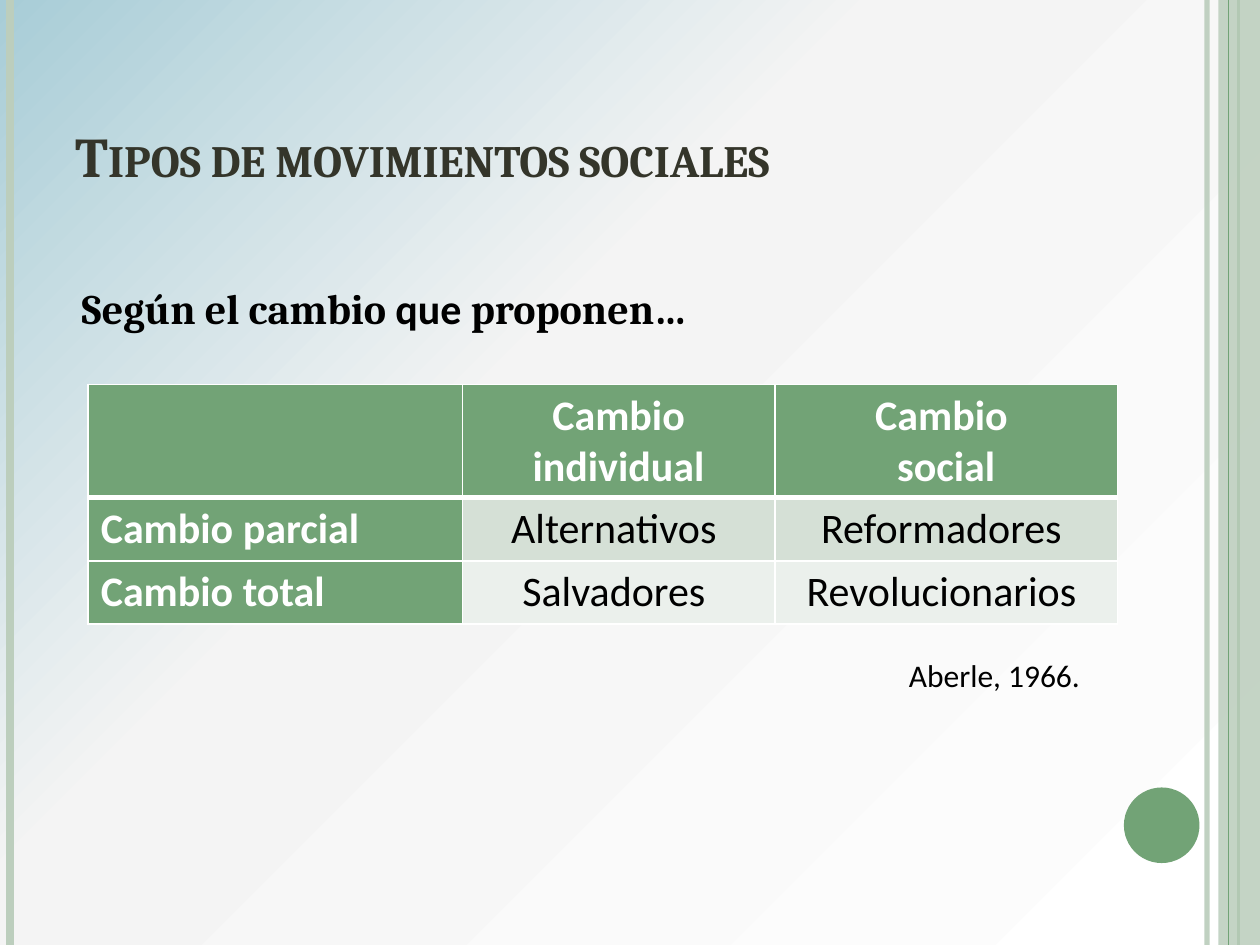
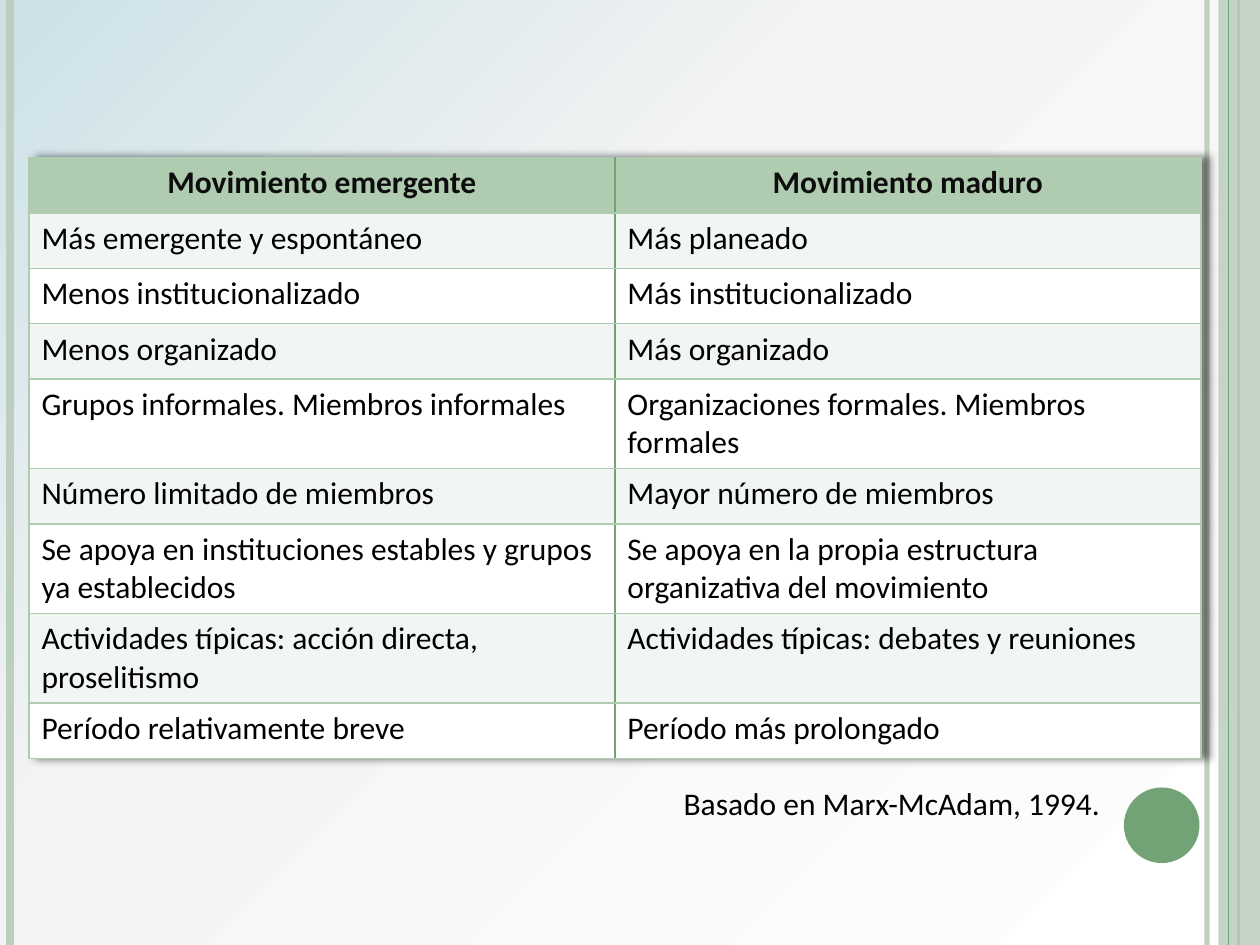
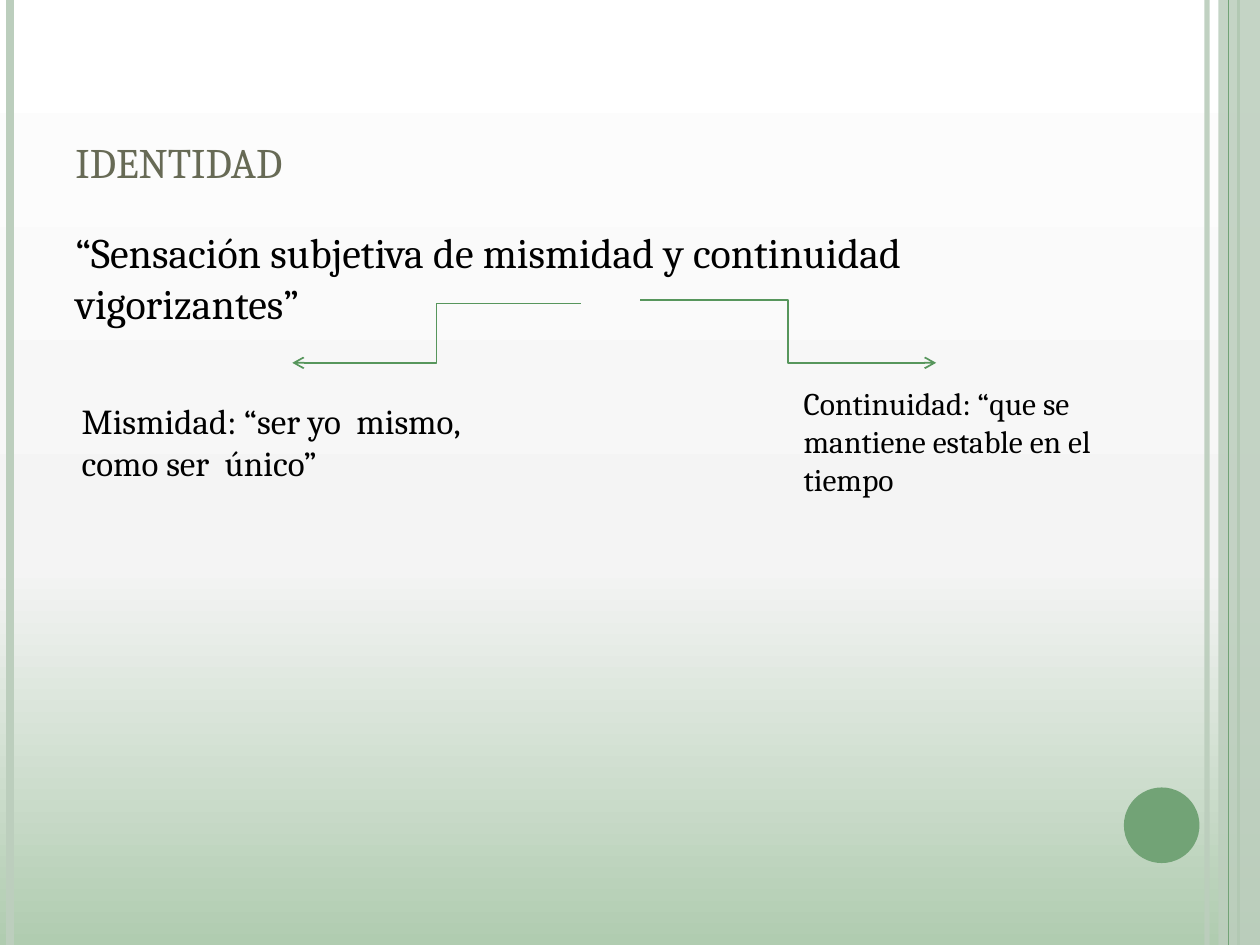
from pptx import Presentation
from pptx.dml.color import RGBColor
from pptx.enum.shapes import MSO_CONNECTOR, MSO_SHAPE
from pptx.enum.text import MSO_ANCHOR, PP_ALIGN
from pptx.oxml import parse_xml
from pptx.oxml.ns import nsdecls
from pptx.oxml.xmlchemy import OxmlElement
from pptx.util import Inches, Pt

COLORS = {
    "green": "72A376",
    "soft_green": "B0CCB0",
    "band": "BCCEBD",
    "arrow": "57965C",
    "blue": "A8CDD7",
    "pale_blue": "CBE1E7",
    "gray": "F4F4F4",
    "white": "FFFFFF",
    "black": "000000",
    "heading": "0D0D0D",
    "dark_olive": "34352A",
    "olive": "676A55",
    "partial_row": "D5E0D6",
    "total_row": "EBF0EC",
    "striped_row": "F2F6F2",
}
SERIF = "Cambria"
SANS = "Calibri"
WIDTH, HEIGHT = 10, 7.5
FROM_TOP_LEFT = '<a:path path="circle"><a:fillToRect r="100000" b="100000"/></a:path>'
FROM_BOTTOM = '<a:lin ang="16200000" scaled="0"/>'

CHANGE_ROWS = [
    ("", "Cambio individual", "Cambio \nsocial"),
    ("Cambio parcial", "Alternativos ", "Reformadores "),
    ("Cambio total", "Salvadores ", "Revolucionarios "),
]
MOVEMENT_ROWS = [
    ("Movimiento emergente", "Movimiento maduro"),
    ("Más emergente y espontáneo", "Más planeado"),
    ("Menos institucionalizado", "Más institucionalizado"),
    ("Menos organizado", "Más organizado"),
    ("Grupos informales. Miembros informales",
     "Organizaciones formales. Miembros formales"),
    ("Número limitado de miembros", "Mayor número de miembros"),
    ("Se apoya en instituciones estables y grupos ya establecidos",
     "Se apoya en la propia estructura organizativa del movimiento"),
    ("Actividades típicas: acción directa, proselitismo",
     "Actividades típicas: debates y reuniones"),
    ("Período relativamente breve", "Período más prolongado"),
]
MOVEMENT_HEIGHTS = [0.44] * 4 + [0.7, 0.44, 0.7, 0.7, 0.44]


def rgb(name):
    return RGBColor.from_string(COLORS[name])


def set_opacity(shape, percent):
    """Make the first colour of a shape or connector partly transparent."""
    alpha = OxmlElement("a:alpha")
    alpha.set("val", str(percent * 1000))
    shape._element.spPr.xpath(".//a:srgbClr")[0].append(alpha)


def set_background(slide, start_color, direction):
    """Fill the slide with a gradient from start_color through gray to white."""
    stops = "".join(
        f'<a:gs pos="{position * 1000}"><a:srgbClr val="{COLORS[name]}"/></a:gs>'
        for position, name in ((0, start_color), (40, "gray"), (100, "white"))
    )
    background = parse_xml(
        f'<p:bg {nsdecls("p", "a")}><p:bgPr><a:gradFill rotWithShape="1">'
        f"<a:gsLst>{stops}</a:gsLst>{direction}</a:gradFill>"
        "<a:effectLst/></p:bgPr></p:bg>"
    )
    slide._element.cSld.insert(0, background)


def add_line(slide, start, end, color, width, kind=MSO_CONNECTOR.STRAIGHT):
    connector = slide.shapes.add_connector(
        kind, *(Inches(value) for value in (*start, *end))
    )
    connector.line.color.rgb = rgb(color)
    connector.line.width = Pt(width)
    connector._element.spPr.append(OxmlElement("a:effectLst"))
    return connector


def add_vertical_rule(slide, left, color, width):
    return add_line(slide, (left, 0), (left, HEIGHT), color, width)


def add_elbow_arrow(slide, start, end):
    arrow = add_line(slide, start, end, "arrow", 1, MSO_CONNECTOR.ELBOW)
    tail = OxmlElement("a:tailEnd")
    tail.set("type", "arrow")
    arrow.line._get_or_add_ln().append(tail)


def add_plain_shape(slide, kind, left, top, width, height, color):
    shape = slide.shapes.add_shape(
        kind, Inches(left), Inches(top), Inches(width), Inches(height)
    )
    shape.shadow.inherit = False
    shape.fill.solid()
    shape.fill.fore_color.rgb = rgb(color)
    shape.line.fill.background()
    return shape


def add_frame(slide):
    """Draw the side rules, right band and corner circle shared by all slides."""
    set_opacity(add_vertical_rule(slide, 9.58, "band", 3), 93)
    add_vertical_rule(slide, 0.08, "band", 4.5)
    add_vertical_rule(slide, 9.83, "green", 1.5)
    band = add_plain_shape(
        slide, MSO_SHAPE.RECTANGLE, 9.67, 0, 0.33, HEIGHT, "band"
    )
    set_opacity(band, 87)
    add_vertical_rule(slide, 9.75, "green", 0.75)
    add_plain_shape(slide, MSO_SHAPE.OVAL, 8.92, 6.25, 0.6, 0.6, "green")


def add_slide(presentation, start_color, direction):
    slide = presentation.slides.add_slide(presentation.slide_layouts[6])
    set_background(slide, start_color, direction)
    add_frame(slide)
    return slide


def style_paragraph(paragraph, size, name, color="black", bold=False,
                    align=PP_ALIGN.LEFT):
    paragraph.alignment = align
    font = paragraph.font
    font.size = Pt(size)
    font.name = name
    font.bold = bold
    font.color.rgb = rgb(color)


def add_text(slide, left, top, width, height, runs, size, name=SERIF, **style):
    """Add a one-paragraph text box; runs holds pairs of text and font or None."""
    box = slide.shapes.add_textbox(
        Inches(left), Inches(top), Inches(width), Inches(height)
    )
    box.text_frame.word_wrap = True
    paragraph = box.text_frame.paragraphs[0]
    style_paragraph(paragraph, size, name, **style)
    for text, run_font in runs:
        run = paragraph.add_run()
        run.text = text
        if run_font:
            run.font.name = run_font
    return box


def add_title(slide, text, size, color, bold=False):
    title = add_text(slide, 0.5, 0.3, 8.17, 1.25, [(text, None)], size,
                     color=color, bold=bold)
    title.text_frame.vertical_anchor = MSO_ANCHOR.BOTTOM
    run = title.text_frame.paragraphs[0].runs[0]
    run._r.get_or_add_rPr().set("cap", "small")


def add_source(slide, left, top, width, text):
    add_text(slide, left, top, width, 0.4, [(text, None)], 18, SANS,
             align=PP_ALIGN.RIGHT)


def set_borders(cell, **sides):
    """Set the L, R, T and B borders, each a pair of colour and width."""
    for side in "LRTB":
        color, width = sides[side]
        cell._tc.get_or_add_tcPr().append(parse_xml(
            f'<a:ln{side} {nsdecls("a")} w="{Pt(width)}"><a:solidFill>'
            f'<a:srgbClr val="{COLORS[color]}"/></a:solidFill></a:ln{side}>'
        ))


def fill_cell(cell, text, fill, size, **style):
    cell.fill.solid()
    cell.fill.fore_color.rgb = rgb(fill)
    cell.text = text
    for paragraph in cell.text_frame.paragraphs:
        style_paragraph(paragraph, size, SANS, **style)


def add_table(slide, left, top, widths, heights):
    table = slide.shapes.add_table(
        len(heights), len(widths), Inches(left), Inches(top),
        Inches(sum(widths)), Inches(sum(heights))
    ).table
    table.horz_banding = False
    for column, width in zip(table.columns, widths):
        column.width = Inches(width)
    for row, height in zip(table.rows, heights):
        row.height = Inches(height)
    return table


def add_change_table(slide):
    table = add_table(slide, 0.7, 3.05, [2.97, 2.48, 2.72], [0.9, 0.5, 0.5])
    row_fills = ("green", "partial_row", "total_row")
    thin, thick = ("white", 1), ("white", 3)
    for row, texts in enumerate(CHANGE_ROWS):
        for column, text in enumerate(texts):
            cell = table.cell(row, column)
            heading = row == 0 or column == 0
            set_borders(cell, L=thin, R=thin, T=thick if row == 1 else thin,
                        B=thick if row == 0 else thin)
            fill_cell(cell, text, "green" if heading else row_fills[row], 24,
                      color="white" if heading else "black", bold=heading,
                      align=PP_ALIGN.CENTER if column else PP_ALIGN.LEFT)
            cell.vertical_anchor = MSO_ANCHOR.MIDDLE


def add_table_shadow(table):
    table._tbl.tblPr.insert(0, parse_xml(
        f'<a:effectLst {nsdecls("a")}>'
        '<a:outerShdw blurRad="50800" dist="50800" dir="0">'
        '<a:srgbClr val="000000"><a:alpha val="50000"/></a:srgbClr>'
        "</a:outerShdw></a:effectLst>"
    ))


def add_movement_table(slide):
    table = add_table(slide, 0.23, 1.25, [4.65, 4.65], MOVEMENT_HEIGHTS)
    add_table_shadow(table)
    outer, divider = ("soft_green", 1), ("green", 1)
    for row, texts in enumerate(MOVEMENT_ROWS):
        heading = row == 0
        fill = "soft_green" if heading else "striped_row" if row % 2 else "white"
        for column, text in enumerate(texts):
            cell = table.cell(row, column)
            set_borders(cell, L=divider if column else outer,
                        R=outer if column else divider, T=outer, B=outer)
            fill_cell(cell, text, fill, 18, bold=heading,
                      color="heading" if heading else "black",
                      align=PP_ALIGN.CENTER if heading else PP_ALIGN.LEFT)


def build_types_slide(presentation):
    slide = add_slide(presentation, "blue", FROM_TOP_LEFT)
    add_title(slide, "Tipos de movimientos sociales", 32, "dark_olive", bold=True)
    add_change_table(slide)
    add_text(slide, 0.55, 2.19, 6.33, 0.5,
             [("Según el cambio ", None), ("que", SANS), (" proponen…", None)],
             24, bold=True)
    add_source(slide, 5.08, 5.16, 3.59, "Aberle, 1966.")


def build_comparison_slide(presentation):
    slide = add_slide(presentation, "pale_blue", FROM_TOP_LEFT)
    add_movement_table(slide)
    add_source(slide, 4.69, 6.17, 4.14, "Basado en Marx-McAdam, 1994.")


def build_identity_slide(presentation):
    slide = add_slide(presentation, "soft_green", FROM_BOTTOM)
    add_title(slide, "identidad", 30, "olive")
    definition = add_text(
        slide, 0.5, 1.75, 8.17, 1.92,
        [("“Sensación subjetiva de mismidad y continuidad vigorizantes”", None)], 24
    )
    definition.text_frame.paragraphs[0].space_before = Pt(6)
    add_elbow_arrow(slide, (4.61, 2.41), (2.32, 2.88))
    add_elbow_arrow(slide, (5.08, 2.38), (7.43, 2.88))
    add_text(slide, 0.55, 3.12, 3.54, 0.77,
             [("Mismidad: “ser yo  mismo, como ser  único”", None)], 20)
    add_text(slide, 6.28, 3, 2.66, 1.01,
             [("Continuidad: “que se mantiene estable en el tiempo", None)], 18)


def main():
    presentation = Presentation()
    presentation.slide_width = Inches(WIDTH)
    presentation.slide_height = Inches(HEIGHT)
    build_types_slide(presentation)
    build_comparison_slide(presentation)
    build_identity_slide(presentation)
    presentation.save("out.pptx")


if __name__ == "__main__":
    main()
